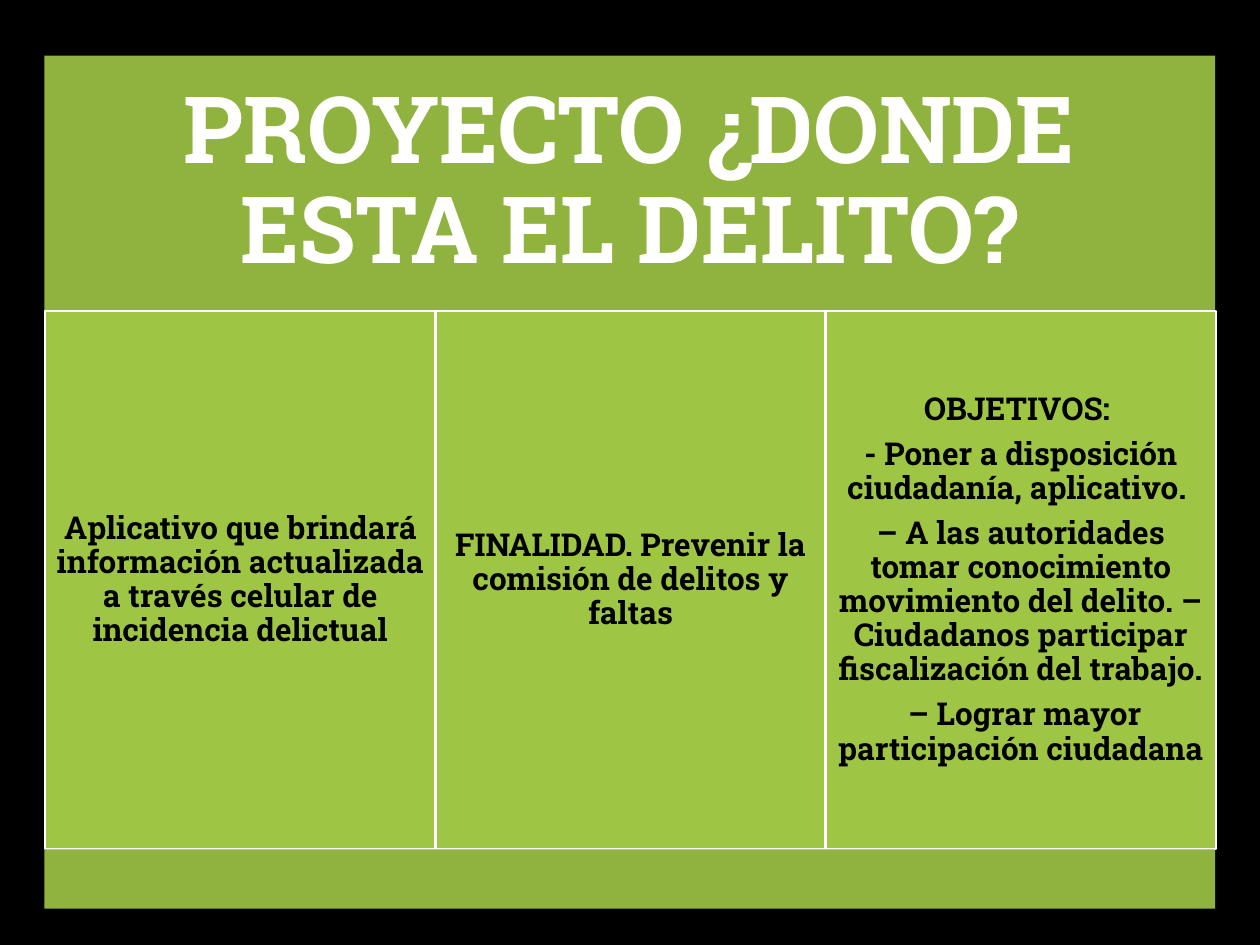
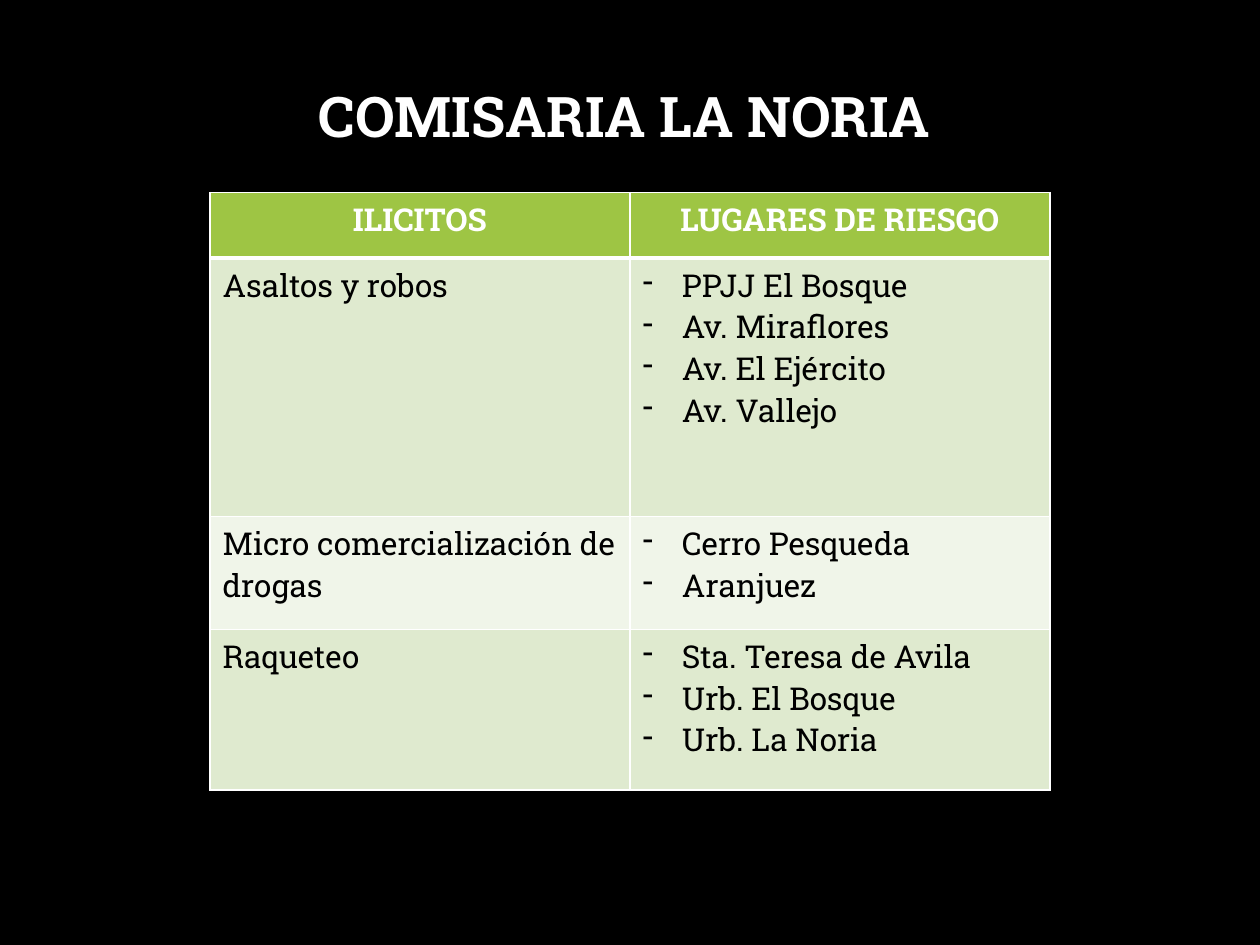
from lxml import etree
from pptx import Presentation
from pptx.dml.color import RGBColor
from pptx.enum.shapes import MSO_SHAPE
from pptx.enum.text import MSO_ANCHOR, PP_ALIGN
from pptx.oxml.ns import qn
from pptx.util import Pt

RECT = MSO_SHAPE.RECTANGLE
MID = MSO_ANCHOR.MIDDLE
LEFT, MIDDLE = PP_ALIGN.LEFT, PP_ALIGN.CENTER
FONT = "Roboto Slab"
HEX = {"black": "000000", "white": "FFFFFF", "band": "8FB33E",
       "green": "9EC544", "odd": "DFEACF", "even": "F0F5E9"}

PROJECT = "PROYECTO ¿DONDE ESTA EL DELITO?"
PANELS = [
    ["Aplicativo que brindará información actualizada a través celular "
     "de incidencia delictual"],
    ["FINALIDAD. Prevenir la comisión de delitos y faltas"],
    ["OBJETIVOS: ",
     "- Poner a disposición ciudadanía, aplicativo. ",
     "– A las autoridades tomar conocimiento movimiento del delito. "
     "– Ciudadanos participar fiscalización del trabajo.",
     " – Lograr mayor participación ciudadana"],
]
STATION = "COMISARIA LA NORIA"
HEADS = ["ILICITOS", "LUGARES DE RIESGO"]
RISKS = [  # crime, places, row height
    ("Asaltos y robos",
     ["PPJJ El Bosque", "Av. Miraflores", "Av. El Ejército", "Av. Vallejo"], 147.6),
    ("Micro comercialización de drogas", ["Cerro Pesqueda", "Aranjuez"], 64.6),
    ("Raqueteo",
     ["Sta. Teresa de Avila", "Urb. El Bosque", "Urb. La Noria"], 92),
]


def rgb(name):
    return RGBColor.from_string(HEX[name])


def write(frame, lines, size, color, bold=True, align=MIDDLE):
    frame.word_wrap = True
    frame.text = "\n".join(lines)
    for para in frame.paragraphs:
        para.alignment = align
        for run in para.runs:
            font = run.font
            font.name, font.size, font.bold = FONT, Pt(size), bold
            font.color.rgb = rgb(color)


def add_page(deck):
    page = deck.slides.add_slide(deck.slide_layouts[6])
    fill = page.background.fill
    fill.solid()
    fill.fore_color.rgb = rgb("black")
    return page


def add_box(page, left, top, width, height, color, edge=False):
    box = page.shapes.add_shape(RECT, Pt(left), Pt(top), Pt(width), Pt(height))
    box.shadow.inherit = False
    box.fill.solid()
    box.fill.fore_color.rgb = rgb(color)
    if edge:
        box.line.color.rgb = rgb("white")
        box.line.width = Pt(1.5)
    else:
        box.line.fill.background()
    return box


def fill_box(box, lines, size, color, inset):
    frame = box.text_frame
    write(frame, lines, size, color)
    frame.vertical_anchor = MID
    frame.margin_left = frame.margin_right = Pt(inset)
    frame.margin_top = frame.margin_bottom = Pt(inset)
    for para in frame.paragraphs:
        para.line_spacing = 0.9
        para.space_after = Pt(size * 0.35)


def paint(cell, color, top, base):
    """Draw the white borders of a cell, then its fill."""
    props = cell._tc.get_or_add_tcPr()
    for side, width in (("L", 1), ("R", 1), ("T", top), ("B", base)):
        line = etree.SubElement(props, qn("a:ln" + side), w=str(Pt(width)))
        solid = etree.SubElement(line, qn("a:solidFill"))
        etree.SubElement(solid, qn("a:srgbClr"), val=HEX["white"])
    cell.fill.solid()
    cell.fill.fore_color.rgb = rgb(color)


def add_dash(para):
    props = para._p.get_or_add_pPr()
    props.set("marL", str(Pt(22.5)))
    props.set("indent", str(Pt(-22.5)))
    etree.SubElement(props, qn("a:buChar"), char="-")


def build_project(deck):
    page = add_page(deck)
    left, width, top, base = 25.4, 669, 177.8, 485.3
    head = add_box(page, left, 31.8, width, top - 31.8, "band")
    fill_box(head, [PROJECT], 53, "white", 15.9)
    step = width / len(PANELS)
    for i, lines in enumerate(PANELS):
        panel = add_box(page, left + 0.4 + i * step, top, step, base - top,
                        "green", edge=True)
        fill_box(panel, lines, 18, "black", 5)
    add_box(page, left, base, width, 34, "band")


def build_station(deck):
    page = add_page(deck)
    heights = [37.4] + [risk[2] for risk in RISKS]
    frame = page.shapes.add_table(len(heights), 2, Pt(120), Pt(110),
                                  Pt(480), Pt(sum(heights)))
    table = frame.table
    for row, height in zip(table.rows, heights):
        row.height = Pt(height)
    for col, head in enumerate(HEADS):
        cell = table.cell(0, col)
        write(cell.text_frame, [head], 18, "white")
        paint(cell, "green", 1, 3)
    for i, (crime, places, _) in enumerate(RISKS, 1):
        for col, lines in enumerate(([crime], places)):
            cell = table.cell(i, col)
            write(cell.text_frame, lines, 18, "black", False, LEFT)
            paint(cell, "odd" if i % 2 else "even", 3 if i == 1 else 1, 1)
        for para in table.cell(i, 1).text_frame.paragraphs:
            add_dash(para)
    title = page.shapes.add_textbox(Pt(133.2), Pt(43.2), Pt(447.8), Pt(46))
    write(title.text_frame, [STATION], 32, "white")


def main():
    deck = Presentation()
    deck.slide_width, deck.slide_height = Pt(720), Pt(540)
    build_project(deck)
    build_station(deck)
    deck.save("out.pptx")


if __name__ == "__main__":
    main()
